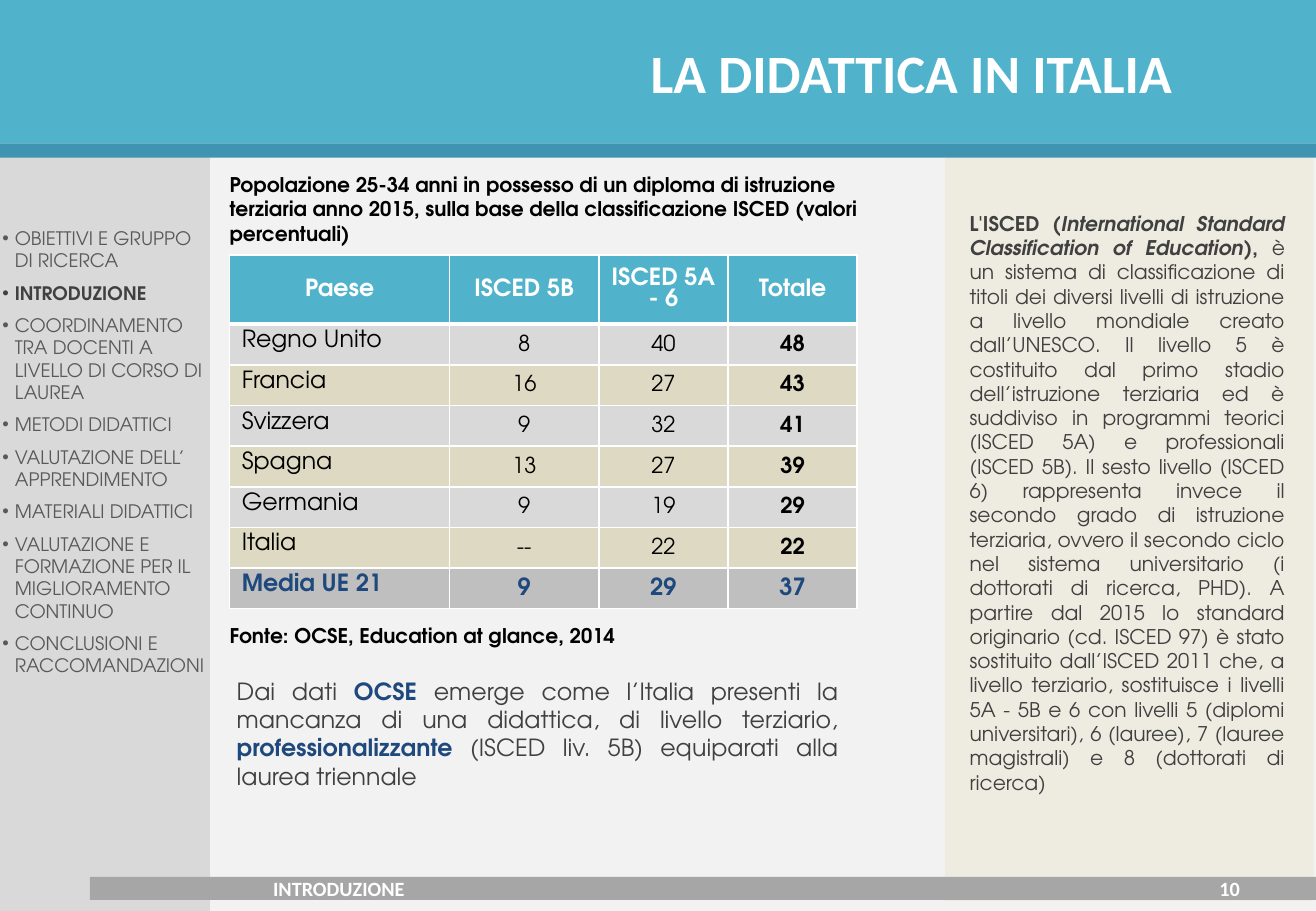
"""Build the slide on tertiary education in Italy."""
from lxml import etree
from pptx import Presentation
from pptx import util as u
from pptx.dml.color import RGBColor
from pptx.enum import shapes, text
from pptx.oxml import ns

BODY, HEAD = "TeX Gyre Adventor", "Calibri"
TEAL, NAVY, WHITE, BLACK = "50B2CB", "1F497D", "FFFFFF", "000000"
DARK, MIDDLE, LIGHT, SAND = "404040", "595959", "D9D9D9", "DDD9C3"
WIDTH, HEIGHT = 27.51, 19.05

TITLE = "LA DIDATTICA IN ITALIA"
CURRENT = "INTRODUZIONE"
MENU = [
    "OBIETTIVI E GRUPPO DI RICERCA",
    CURRENT,
    "COORDINAMENTO TRA DOCENTI A LIVELLO DI CORSO DI LAUREA",
    "METODI DIDATTICI",
    "VALUTAZIONE DELL’ APPRENDIMENTO",
    "MATERIALI DIDATTICI",
    "VALUTAZIONE E FORMAZIONE PER IL MIGLIORAMENTO CONTINUO",
    "CONCLUSIONI E RACCOMANDAZIONI",
]
CAPTION = ("Popolazione 25-34 anni in possesso di un diploma di istruzione terziaria "
           "anno 2015, sulla base della classificazione ISCED (valori percentuali)")
SOURCE = "Fonte: OCSE, Education at glance, 2014"
ROWS = [
    ("Paese", "ISCED 5B", "ISCED 5A - 6", "Totale"),
    ("Regno Unito", "8", "40", "48"),
    ("Francia", "16", "27", "43"),
    ("Svizzera", "9", "32", "41"),
    ("Spagna", "13", "27", "39"),
    ("Germania", "9", "19", "29"),
    ("Italia", "--", "22", "22"),
    ("Media UE 21", "9", "29", "37"),
]
COLUMN_WIDTHS = (4.6, 3.12, 2.7, 2.7)
HEADER_HEIGHT, ROW_HEIGHT = 1.45, 0.85
COMMENT = [
    ("Dai dati ", {}),
    ("OCSE ", {"bold": True, "color": NAVY}),
    ("emerge come l’Italia presenti la mancanza di una didattica, di livello terziario, ", {}),
    ("professionalizzante", {"bold": True, "color": NAVY}),
    (" (ISCED liv. 5B) equiparati alla laurea triennale", {}),
]
DEFINITION = [
    ("L'ISCED (", {"bold": True}),
    ("International Standard Classification of Education", {"bold": True, "italic": True}),
    ("), ", {"bold": True}),
    ("è un sistema di classificazione di titoli dei diversi livelli di istruzione a livello "
     "mondiale creato dall’UNESCO. Il livello 5 è costituito dal primo stadio dell’istruzione "
     "terziaria ed è suddiviso in programmi teorici (ISCED 5A) e professionali (ISCED 5B). "
     "Il sesto livello (ISCED 6) rappresenta invece il secondo grado di istruzione terziaria, "
     "ovvero il secondo ciclo nel sistema universitario (i dottorati di ricerca, PHD). "
     "A partire dal 2015 lo standard originario (cd. ISCED 97) è stato sostituito dall’ISCED "
     "2011 che, a livello terziario, sostituisce i livelli 5A - 5B e 6 con livelli 5 (diplomi "
     "universitari), 6 (lauree), 7 (lauree magistrali) e 8 (dottorati di ricerca)", {}),
]
PANELS = [
    ((19.76, 3.07, 7.7, 15.77), "EEECE1"),
    ((0, 3.1, 4.39, HEIGHT - 3.1), LIGHT),
    ((0, 3, WIDTH, 0.3), "3F94B2"),
    ((1.88, 18.34, WIDTH - 1.88, 0.48), "A6A6A6"),
]


def rgb(value):
    return RGBColor.from_string(value)


def lengths(values):
    return [u.Cm(value) for value in values]


def style(font, size, color, bold=False, name=BODY):
    font.name, font.size, font.bold = name, u.Pt(size), bold
    font.color.rgb = rgb(color)


def add_panel(page, place, color):
    panel = page.shapes.add_shape(shapes.MSO_SHAPE.RECTANGLE, *lengths(place))
    panel.shadow.inherit = False
    panel.fill.solid()
    panel.fill.fore_color.rgb = rgb(color)
    panel.line.fill.background()


def add_box(page, place):
    frame = page.shapes.add_textbox(*lengths(place)).text_frame
    frame.word_wrap = True
    return frame


def add_line(page, place, words, size, color, name=BODY, align=text.PP_ALIGN.LEFT, before=0):
    para = add_box(page, place).paragraphs[0]
    para.text, para.alignment, para.space_before = words, align, u.Pt(before)
    style(para.font, size, color, True, name)


def add_prose(page, place, parts, size, before=0):
    para = add_box(page, place).paragraphs[0]
    para.alignment, para.space_before = text.PP_ALIGN.JUSTIFY, u.Pt(before)
    style(para.font, size, DARK)
    for words, look in parts:
        span = para.add_run()
        span.text = words
        style(span.font, size, look.get("color", DARK), look.get("bold", False))
        span.font.italic = look.get("italic", False)


def add_title(page):
    title = page.shapes.title
    title.left, title.top, title.width, title.height = lengths((0, 0, WIDTH, 3))
    title.fill.solid()
    title.fill.fore_color.rgb = rgb(TEAL)
    frame = title.text_frame
    frame.auto_size = text.MSO_AUTO_SIZE.NONE
    frame.vertical_anchor = text.MSO_ANCHOR.MIDDLE
    frame.margin_right = u.Cm(3)
    para = frame.paragraphs[0]
    para.text, para.alignment = TITLE, text.PP_ALIGN.RIGHT
    style(para.font, 32, WHITE, True, HEAD)


def add_menu(page):
    frame = add_box(page, (-0.2, 4.62, 4.8, 9.75))
    for index, entry in enumerate(MENU):
        para = frame.add_paragraph() if index else frame.paragraphs[0]
        para.text, para.space_after = entry, u.Pt(6)
        active = entry == CURRENT
        style(para.font, 11, DARK if active else MIDDLE, active)
        props = para._p.get_or_add_pPr()
        props.set("marL", str(u.Cm(0.26)))
        props.set("indent", str(u.Cm(-0.26)))
        bullet_font = etree.Element(ns.qn("a:buFont"), typeface="Arial")
        bullet = etree.Element(ns.qn("a:buChar"), char="•")
        props.find(ns.qn("a:defRPr")).addprevious(bullet_font)
        bullet_font.addnext(bullet)


def add_borders(cell, row):
    props = cell._tc.get_or_add_tcPr()
    thick = {0: "lnB", 1: "lnT"}.get(row)
    for side in ("lnL", "lnR", "lnT", "lnB"):
        line = etree.SubElement(props, ns.qn(f"a:{side}"), w=str(u.Pt(3 if side == thick else 1)))
        fill = etree.SubElement(line, ns.qn("a:solidFill"))
        etree.SubElement(fill, ns.qn("a:srgbClr"), val=WHITE)


def format_cell(cell, row, column, words):
    header, average = row == 0, row == len(ROWS) - 1
    add_borders(cell, row)
    cell.fill.solid()
    band = LIGHT if row % 2 else SAND
    cell.fill.fore_color.rgb = rgb(TEAL if header else "BFBFBF" if average else band)
    para = cell.text_frame.paragraphs[0]
    para.text = words
    if header or column:
        para.alignment = text.PP_ALIGN.CENTER
        cell.vertical_anchor = text.MSO_ANCHOR.MIDDLE
    if column and not header:
        cell.margin_left = cell.margin_right = cell.margin_top = u.Cm(0.03)
        cell.margin_bottom = 0
    size = 14 if header or average or column == 0 else 13
    color = WHITE if header else NAVY if average else BLACK
    style(para.font, size, color, header or average or column == 3)


def add_data(page):
    height = HEADER_HEIGHT + ROW_HEIGHT * (len(ROWS) - 1)
    place = lengths((4.8, 5.33, sum(COLUMN_WIDTHS), height))
    table = page.shapes.add_table(len(ROWS), len(COLUMN_WIDTHS), *place).table
    for column, width in zip(table.columns, COLUMN_WIDTHS):
        column.width = u.Cm(width)
    for row, values in enumerate(ROWS):
        table.rows[row].height = u.Cm(ROW_HEIGHT if row else HEADER_HEIGHT)
        for column, words in enumerate(values):
            format_cell(table.cell(row, column), row, column, words)


def main():
    deck = Presentation()
    deck.slide_width, deck.slide_height = lengths((WIDTH, HEIGHT))
    page = deck.slides.add_slide(deck.slide_layouts[5])
    page.background.fill.solid()
    page.background.fill.fore_color.rgb = rgb("F2F2F2")
    add_title(page)
    for place, color in PANELS:
        add_panel(page, place, color)
    add_line(page, (19.74, 18.2, 6.43, 0.76), "10", 12, WHITE, HEAD, text.PP_ALIGN.RIGHT)
    add_line(page, (4.55, 3.48, 14.5, 1.04), CAPTION, 12, BLACK, before=2.4)
    add_data(page)
    add_line(page, (4.55, 12.9, 14.5, 1.04), SOURCE, 12, BLACK, before=2.4)
    add_prose(page, (4.7, 14.02, 13.08, 2.64), COMMENT, 14)
    add_line(page, (5.46, 18.2, 9.83, 0.76), CURRENT, 12, WHITE, HEAD)
    add_menu(page)
    add_prose(page, (20.02, 4.29, 7.09, 12.57), DEFINITION, 12, before=6)
    deck.save("out.pptx")


if __name__ == "__main__":
    main()
